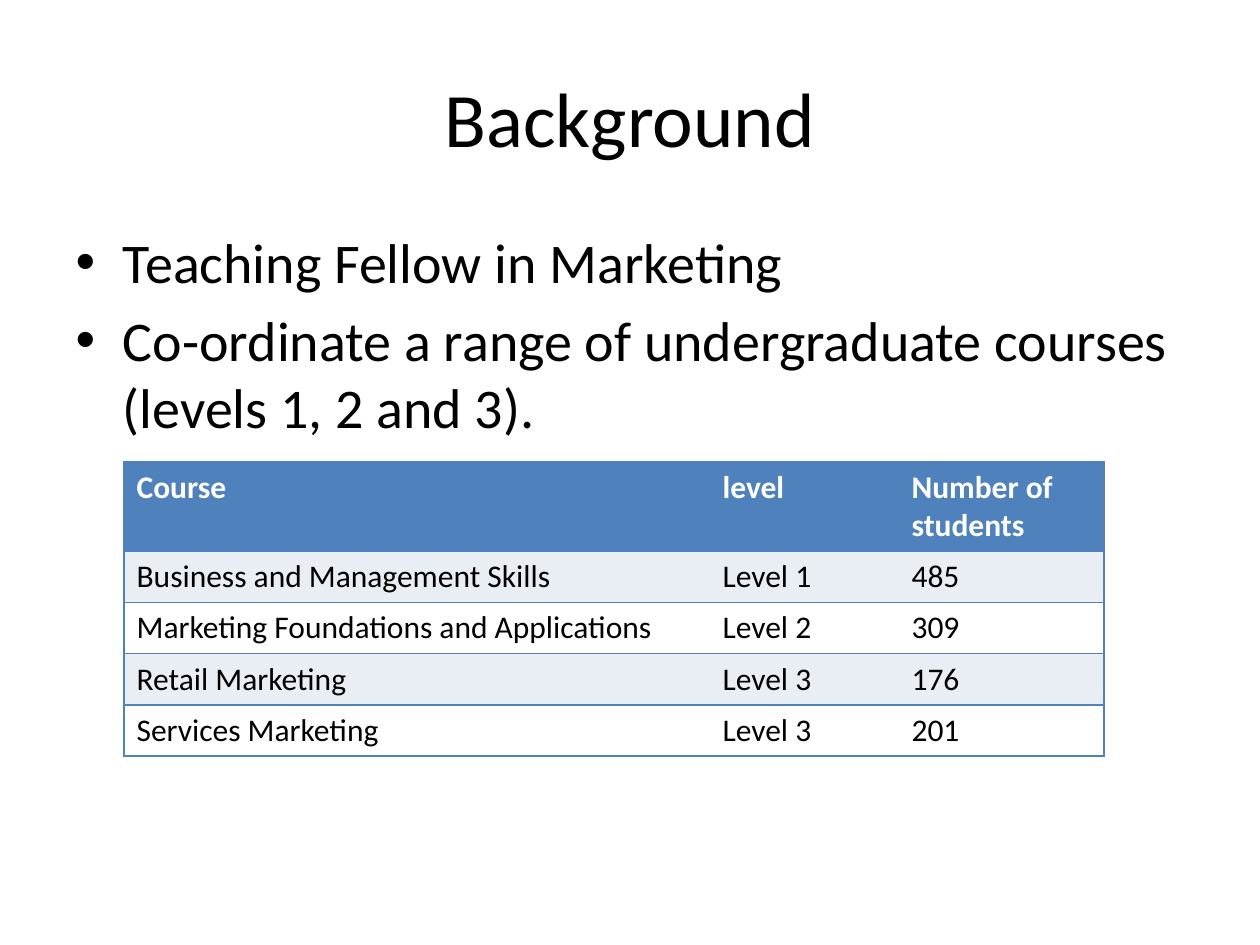
from lxml import etree
from pptx import Presentation
from pptx import util as u
from pptx.dml.color import RGBColor
from pptx.enum import text
from pptx.oxml.ns import qn

HUES = {"ink": "000000", "paper": "FFFFFF", "blue": "4F81BD", "band": "E9EDF4"}
FONT = "Calibri"
COLS = [586, 189, 205]
ROW = 51
COURSES = [
    ("Course", "level", "Number of students"),
    ("Business and Management Skills", "Level 1", "485"),
    ("Marketing Foundations and Applications", "Level 2", "309"),
    ("Retail Marketing", "Level 3", "176"),
    ("Services Marketing", "Level 3", "201"),
]


def px(n):
    return u.Emu(round(n * 914400 / 126))


class Deck:
    """Holds the style and the current slide."""

    def __init__(self):
        self.prs = Presentation()
        self.prs.slide_width, self.prs.slide_height = px(1260), px(945)
        self.slide = self.prs.slides.add_slide(self.prs.slide_layouts[1])

    def place(self, shape, left, top, width, height):
        shape.left, shape.top = px(left), px(top)
        shape.width, shape.height = px(width), px(height)

    def label(self, para, words, size, hue="ink", bold=False):
        run = para.add_run()
        run.text = words
        font = run.font
        font.name, font.size, font.bold = FONT, u.Pt(size), bold
        font.color.rgb = RGBColor.from_string(HUES[hue])

    def title(self, words, *box):
        shape = self.slide.shapes.title
        self.place(shape, *box)
        para = shape.text_frame.paragraphs[0]
        para.alignment = text.PP_ALIGN.CENTER
        self.label(para, words, 44)

    def body(self, items, *box):
        shape = self.slide.placeholders[1]
        self.place(shape, *box)
        frame = shape.text_frame
        for i, words in enumerate(items):
            para = frame.add_paragraph() if i else frame.paragraphs[0]
            self.label(para, words, 32)

    def edge(self, cell, sides):
        """Draw the named sides of a cell and clear the others."""
        props = cell._tc.get_or_add_tcPr()
        for i, side in enumerate("LRTB"):
            line = etree.Element(qn("a:ln" + side), w=str(u.Pt(1)))
            if side in sides:
                fill = etree.SubElement(line, qn("a:solidFill"))
                etree.SubElement(fill, qn("a:srgbClr"), val=HUES["blue"])
            else:
                etree.SubElement(line, qn("a:noFill"))
            props.insert(i, line)

    def table(self, rows, left, top, height):
        shape = self.slide.shapes.add_table(
            len(rows), len(COLS), px(left), px(top), px(sum(COLS)), px(height))
        grid = shape.table
        for col, width in zip(grid.columns, COLS):
            col.width = px(width)
        for r, row in enumerate(rows):
            grid.rows[r].height = px(ROW)
            back = "blue" if r == 0 else "band" if r % 2 else "paper"
            for c, words in enumerate(row):
                cell = grid.cell(r, c)
                cell.fill.solid()
                cell.fill.fore_color.rgb = RGBColor.from_string(HUES[back])
                ends = ("L" if c == 0 else "") + ("R" if c == len(COLS) - 1 else "")
                self.edge(cell, "TB" + ends)
                self.label(cell.text_frame.paragraphs[0], words, 18,
                           "ink" if r else "paper", r == 0)
        shape.height = px(height)


def main():
    deck = Deck()
    deck.title("Background", 63, 38, 1134, 158)
    deck.body(["Teaching Fellow in Marketing",
               "Co-ordinate a range of undergraduate courses (levels 1, 2 and 3)."],
              63, 221, 1134, 624)
    deck.table(COURSES, 124, 462, 292)
    deck.prs.save("out.pptx")


if __name__ == "__main__":
    main()
